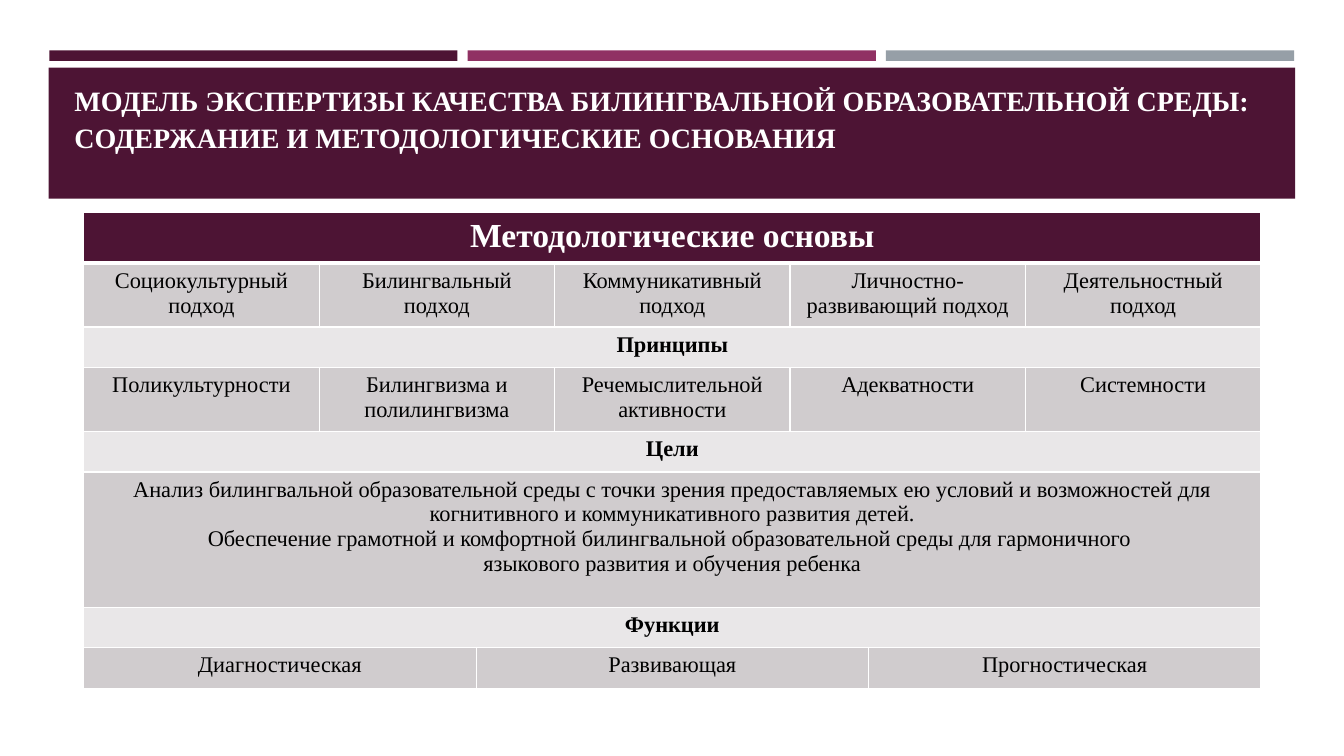
from dataclasses import dataclass
from itertools import accumulate

from lxml import etree
from pptx import Presentation
from pptx import util as u
from pptx.dml.color import RGBColor
from pptx.enum import shapes, text
from pptx.oxml import ns

COLORS = {
    "plum": "4D1434",
    "magenta": "903163",
    "slate": "969FA7",
    "white": "FFFFFF",
    "black": "000000",
    "body": "D0CCCE",
    "heading": "E9E7E8",
}
FONT = "Times New Roman"
COLUMN_UNIT = 56.06
COLUMN_UNITS = (3, 2, 1, 3, 1, 2, 3)
FIVE = (1, 2, 1, 2, 1)
THREE = (2, 3, 2)
FULL = (7,)


@dataclass(frozen=True)
class Block:
    left: float
    top: float
    width: float
    height: float
    fill: str


@dataclass(frozen=True)
class RowStyle:
    fill: str
    color: str
    size: float
    bold: bool
    bottom_border: float = 1


@dataclass(frozen=True)
class Row:
    height: float
    style: RowStyle
    spans: tuple[int, ...]
    texts: tuple[str, ...]


TITLE_STYLE = RowStyle("plum", "white", 20, True)
HEADER = RowStyle("plum", "white", 24, True, 3)
SECTION = RowStyle("heading", "black", 16, True)
BODY = RowStyle("body", "black", 16, False)

BLOCKS = [
    Block(35.2 + index * 298.8, 36, 291.6, 7.5, fill)
    for index, fill in enumerate(("plum", "magenta", "slate"))
] + [Block(34.7, 48.4, 890.4, 93.6, "plum")]

TITLE = (
    "МОДЕЛЬ ЭКСПЕРТИЗЫ КАЧЕСТВА БИЛИНГВАЛЬНОЙ ОБРАЗОВАТЕЛЬНОЙ СРЕДЫ: "
    "СОДЕРЖАНИЕ И МЕТОДОЛОГИЧЕСКИЕ ОСНОВАНИЯ"
)
GOALS = (
    "Анализ билингвальной образовательной среды с точки зрения предоставляемых ею "
    "условий и возможностей для когнитивного и коммуникативного развития детей.\n"
    "Обеспечение грамотной и комфортной билингвальной образовательной среды для "
    "гармоничного \n"
    "языкового развития и обучения ребенка"
)
ROWS = [
    Row(34, HEADER, FULL, ("Методологические основы",)),
    Row(43, BODY, FIVE, (
        "Социокультурный подход", "Билингвальный подход", "Коммуникативный подход",
        "Личностно-развивающий подход", "Деятельностный подход")),
    Row(29, SECTION, FULL, ("Принципы",)),
    Row(43, BODY, FIVE, (
        "Поликультурности", "Билингвизма и полилингвизма",
        "Речемыслительной активности", "Адекватности", "Системности")),
    Row(29, SECTION, FULL, ("Цели",)),
    Row(96.5, BODY, FULL, (GOALS,)),
    Row(29, SECTION, FULL, ("Функции",)),
    Row(29, BODY, THREE, ("Диагностическая", "Развивающая", "Прогностическая")),
]


def rgb(name: str) -> RGBColor:
    return RGBColor.from_string(COLORS[name])


def write_text(frame, content: str, style: RowStyle, **paragraph_format) -> None:
    frame.text = content
    font_format = {"name": FONT, "size": u.Pt(style.size), "bold": style.bold}
    for paragraph in frame.paragraphs:
        for name, value in paragraph_format.items():
            setattr(paragraph, name, value)
        for run in paragraph.runs:
            for name, value in font_format.items():
                setattr(run.font, name, value)
            run.font.color.rgb = rgb(style.color)


def draw_block(slide, block: Block) -> None:
    shape = slide.shapes.add_shape(
        shapes.MSO_SHAPE.RECTANGLE,
        u.Pt(block.left), u.Pt(block.top), u.Pt(block.width), u.Pt(block.height))
    shape.shadow.inherit = False
    shape.fill.solid()
    shape.fill.fore_color.rgb = rgb(block.fill)
    shape.line.fill.background()


def draw_title(slide) -> None:
    frame = slide.shapes.add_textbox(
        u.Pt(46.1), u.Pt(55.4), u.Pt(868.3), u.Pt(58.3)).text_frame
    frame.word_wrap = True
    frame.vertical_anchor = text.MSO_ANCHOR.BOTTOM
    write_text(frame, TITLE, TITLE_STYLE, line_spacing=1.1)


def set_borders(cell, widths: dict[str, float]) -> None:
    properties = cell._tc.get_or_add_tcPr()
    for index, (side, width) in enumerate(widths.items()):
        line = etree.Element(ns.qn(f"a:{side}"), w=str(u.Pt(width)))
        fill = etree.SubElement(line, ns.qn("a:solidFill"))
        etree.SubElement(fill, ns.qn("a:srgbClr"), val=COLORS["white"])
        properties.insert(index, line)


def draw_table(slide) -> None:
    table = slide.shapes.add_table(
        len(ROWS), len(COLUMN_UNITS), u.Pt(59.8), u.Pt(151.9),
        u.Pt(COLUMN_UNIT * sum(COLUMN_UNITS)),
        u.Pt(sum(row.height for row in ROWS))).table
    for column, units in zip(table.columns, COLUMN_UNITS):
        column.width = u.Pt(COLUMN_UNIT * units)
    top_border = 1
    for row_index, row in enumerate(ROWS):
        table.rows[row_index].height = u.Pt(row.height)
        for column_index in range(len(COLUMN_UNITS)):
            cell = table.cell(row_index, column_index)
            cell.fill.solid()
            cell.fill.fore_color.rgb = rgb(row.style.fill)
            set_borders(cell, {"lnL": 1, "lnR": 1, "lnT": top_border,
                               "lnB": row.style.bottom_border})
        starts = accumulate(row.spans, initial=0)
        for start, span, content in zip(starts, row.spans, row.texts):
            cell = table.cell(row_index, start)
            if span > 1:
                cell.merge(table.cell(row_index, start + span - 1))
            write_text(cell.text_frame, content, row.style,
                       alignment=text.PP_ALIGN.CENTER)
        top_border = row.style.bottom_border


def main() -> None:
    presentation = Presentation()
    presentation.slide_width = u.Pt(960)
    presentation.slide_height = u.Pt(540)
    slide = presentation.slides.add_slide(presentation.slide_layouts[6])
    for block in BLOCKS:
        draw_block(slide, block)
    draw_title(slide)
    draw_table(slide)
    presentation.save("out.pptx")


if __name__ == "__main__":
    main()
